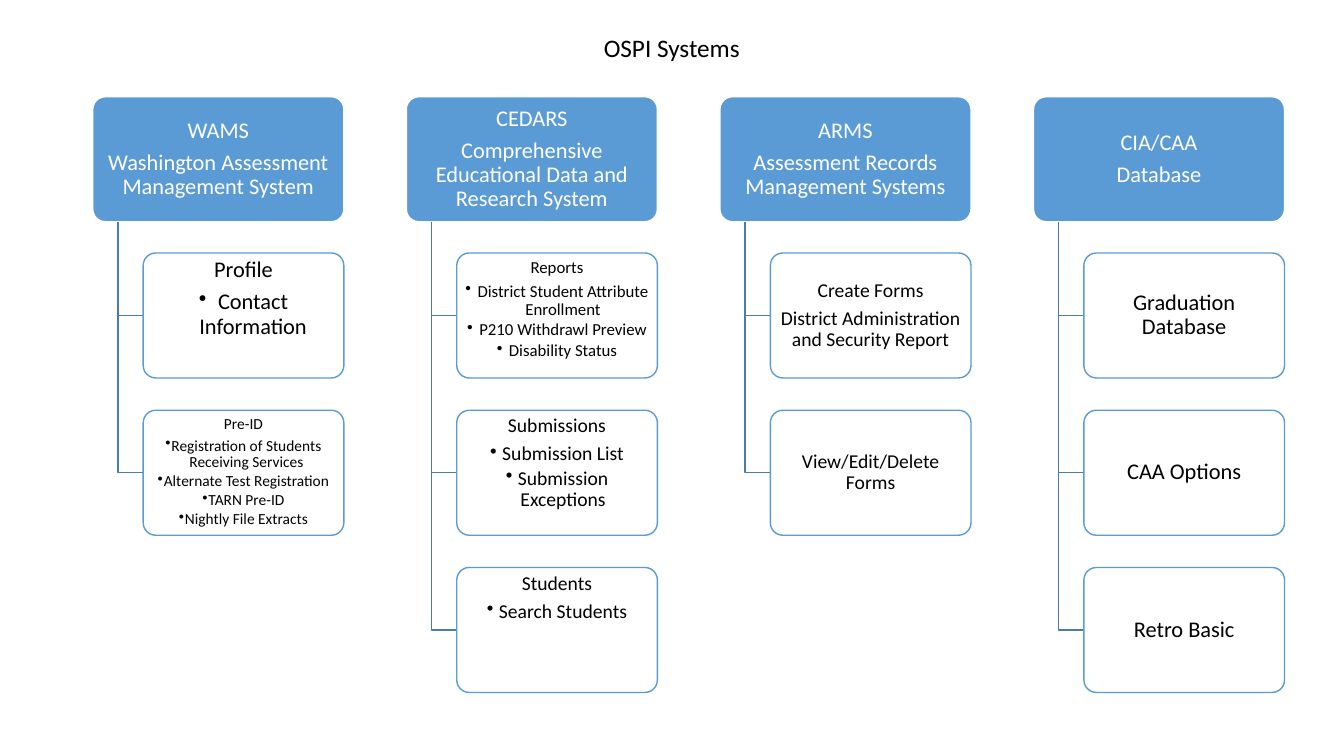
from dataclasses import dataclass

from lxml.etree import SubElement
from pptx import Presentation
from pptx.dml.color import RGBColor
from pptx.dml.fill import FillFormat
from pptx.enum.shapes import MSO_SHAPE
from pptx.enum.text import MSO_ANCHOR, MSO_AUTO_SIZE, PP_ALIGN
from pptx.oxml.ns import qn
from pptx.shapes.autoshape import Shape
from pptx.slide import Slide
from pptx.text.text import _Paragraph as Paragraph
from pptx.util import Emu, Pt

EMU_PER_PX = 9144  # 100 px to the inch
FONT = "Calibri"
BLUE, CONNECTOR_BLUE = "5B9BD5", "497CAB"
WHITE, BLACK = "FFFFFF", "000000"

# Layout in px
COLUMN_LEFT, COLUMN_STEP = 92, 311
HEADER_TOP, HEADER_WIDTH = 96, 249
CARD_TOP, CARD_STEP, CARD_WIDTH = 251, 156, 199
BOX_HEIGHT = 124
TRUNK_INDENT, CARD_INDENT = 25, 50


@dataclass(frozen=True)
class Card:
    lines: tuple[str, ...]
    size: int
    bullets: tuple[str, ...] = ()
    hang: int = 12


@dataclass(frozen=True)
class System:
    name: str
    title: str
    cards: tuple[Card, ...]


SYSTEMS = (
    System("WAMS", "Washington Assessment Management System", (
        Card(("Profile",), 16, ("Contact Information",), hang=19),
        Card(("Pre-ID",), 11, (
            "Registration of Students Receiving Services",
            "Alternate Test Registration",
            "TARN Pre-ID",
            "Nightly File Extracts",
        ), hang=6),
    )),
    System("CEDARS", "Comprehensive Educational Data and Research System", (
        Card(("Reports",), 12, (
            "District Student Attribute Enrollment",
            "P210 Withdrawl Preview",
            "Disability Status",
        )),
        Card(("Submissions",), 14, ("Submission List", "Submission Exceptions")),
        Card(("Students",), 14, ("Search Students",)),
    )),
    System("ARMS", "Assessment Records Management Systems", (
        Card(("Create Forms", "District Administration and Security Report"), 14),
        Card(("View/Edit/Delete Forms",), 14),
    )),
    System("CIA/CAA", "Database", (
        Card(("Graduation Database",), 16),
        Card(("CAA Options",), 16),
        Card(("Retro Basic",), 16),
    )),
)


def px(value: int) -> Emu:
    return Emu(value * EMU_PER_PX)


def color(value: str) -> RGBColor:
    return RGBColor.from_string(value)


def set_opacity(fill: FillFormat, percent: int) -> None:
    solid_color = fill._xPr.find(qn("a:solidFill"))[0]
    SubElement(solid_color, qn("a:alpha"), val=str(percent * 1000))


def add_bullet(paragraph: Paragraph, hang: int) -> None:
    paragraph.level = 1
    properties = paragraph._p.get_or_add_pPr()
    properties.set("marL", str(px(hang)))
    properties.set("indent", str(-px(hang)))
    SubElement(properties, qn("a:buChar"), char="•")


def format_runs(paragraph: Paragraph, size: int, text_color: str) -> None:
    for run in paragraph.runs:
        run.font.name = FONT
        run.font.size = Pt(size)
        run.font.color.rgb = color(text_color)


def write_text(shape: Shape, card: Card, text_color: str) -> None:
    frame = shape.text_frame
    frame.word_wrap = True
    frame.margin_left = frame.margin_right = px(3)
    frame.margin_top = frame.margin_bottom = px(2)
    frame.vertical_anchor = MSO_ANCHOR.TOP if card.bullets else MSO_ANCHOR.MIDDLE
    frame.text = "\n".join(card.lines + card.bullets)
    for index, paragraph in enumerate(frame.paragraphs):
        is_bullet = index >= len(card.lines)
        paragraph.alignment = PP_ALIGN.CENTER
        paragraph.line_spacing = 0.9
        paragraph.space_after = Pt(card.size * (0.15 if is_bullet else 0.35))
        if is_bullet:
            add_bullet(paragraph, card.hang)
        format_runs(paragraph, card.size, text_color)


def add_box(slide: Slide, left: int, top: int, width: int,
            fill: str, line: str) -> Shape:
    box = slide.shapes.add_shape(MSO_SHAPE.ROUNDED_RECTANGLE, px(left), px(top),
                                 px(width), px(BOX_HEIGHT))
    box.adjustments[0] = 0.1
    box.shadow.inherit = False
    box.fill.solid()
    box.fill.fore_color.rgb = color(fill)
    box.line.color.rgb = color(line)
    box.line.width = Pt(1)
    return box


def add_elbow(slide: Slide, left: int, top: int, right: int, bottom: int) -> None:
    builder = slide.shapes.build_freeform(left, top, scale=EMU_PER_PX)
    builder.add_line_segments([(left, bottom), (right, bottom)], close=False)
    elbow = builder.convert_to_shape()
    elbow.shadow.inherit = False
    elbow.fill.background()
    elbow.line.color.rgb = color(CONNECTOR_BLUE)
    elbow.line.width = Pt(1)


def add_system(slide: Slide, system: System, left: int) -> None:
    # Header
    header = add_box(slide, left, HEADER_TOP, HEADER_WIDTH, BLUE, WHITE)
    write_text(header, Card((system.name, system.title), 16), WHITE)

    # Cards hanging from the header
    for row, card in enumerate(system.cards):
        top = CARD_TOP + row * CARD_STEP
        add_elbow(slide, left + TRUNK_INDENT, HEADER_TOP + BOX_HEIGHT,
                  left + CARD_INDENT, top + BOX_HEIGHT // 2)
        box = add_box(slide, left + CARD_INDENT, top, CARD_WIDTH, WHITE, BLUE)
        set_opacity(box.fill, 90)
        write_text(box, card, BLACK)


def add_title(slide: Slide, text: str) -> None:
    title = slide.shapes.add_textbox(px(589), px(27), px(156), px(40))
    frame = title.text_frame
    frame.word_wrap = False
    frame.auto_size = MSO_AUTO_SIZE.SHAPE_TO_FIT_TEXT
    frame.text = text
    format_runs(frame.paragraphs[0], 18, BLACK)


def main() -> None:
    presentation = Presentation()
    presentation.slide_width, presentation.slide_height = px(1333), px(750)
    slide = presentation.slides.add_slide(presentation.slide_layouts[6])

    for column, system in enumerate(SYSTEMS):
        add_system(slide, system, COLUMN_LEFT + column * COLUMN_STEP)
    add_title(slide, "OSPI Systems")

    presentation.save("out.pptx")


if __name__ == "__main__":
    main()
